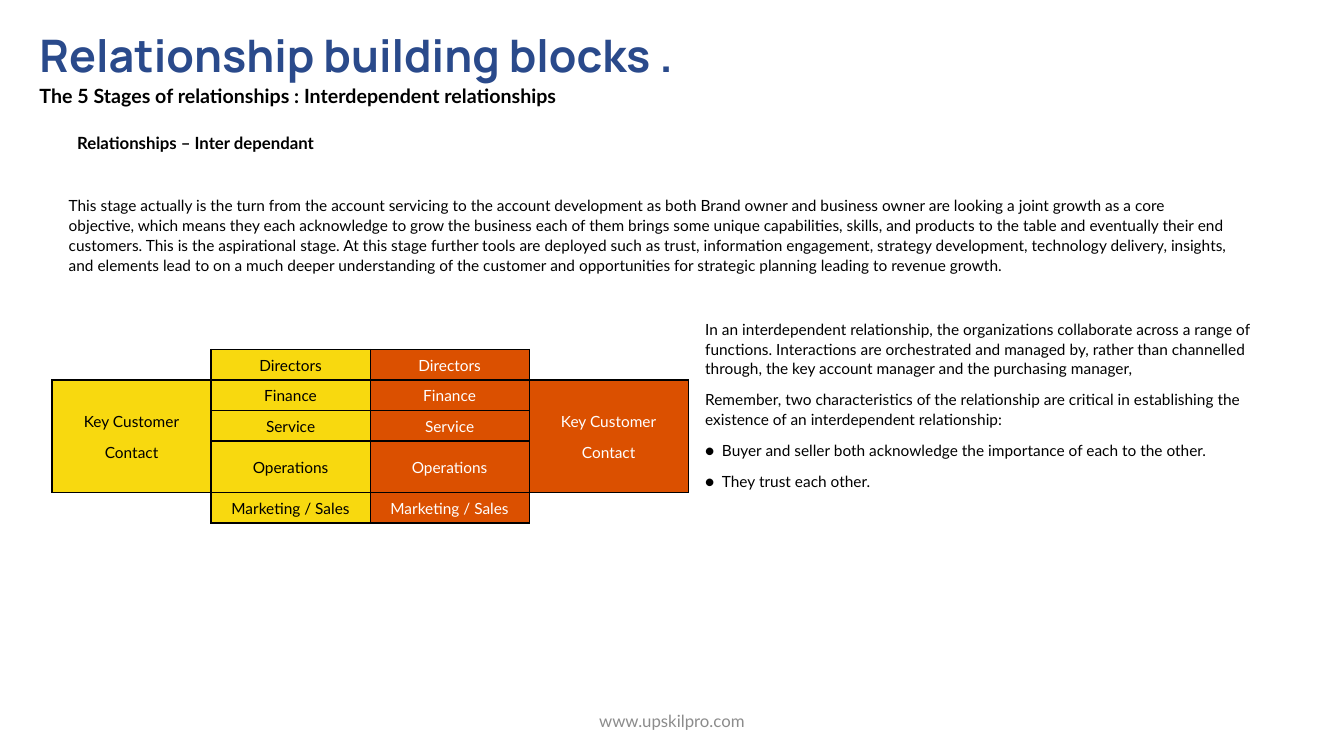
from dataclasses import dataclass

from lxml import etree
from pptx import Presentation
from pptx.dml.color import RGBColor
from pptx.enum.text import MSO_ANCHOR, MSO_AUTO_SIZE, PP_ALIGN
from pptx.oxml.ns import qn
from pptx.util import Pt

LEFT, CENTER = PP_ALIGN.LEFT, PP_ALIGN.CENTER
TOP, MIDDLE = MSO_ANCHOR.TOP, MSO_ANCHOR.MIDDLE
NO_AUTOSIZE = MSO_AUTO_SIZE.NONE
PLAIN_TABLE_STYLE = "{2D5ABB26-0587-4C30-8999-92F81FD0307C}"


@dataclass(frozen=True)
class Theme:
    heading_font: str = "Manrope"
    body_font: str = "Lato"
    blue: str = "2A4A8B"
    black: str = "000000"
    white: str = "FFFFFF"
    gray: str = "8C8C8C"
    yellow: str = "F8D90F"
    orange: str = "DB5000"
    title_size: int = 32
    subtitle_size: int = 14
    label_size: int = 12
    body_size: int = 11
    line_spacing: float = 1.07
    space_after: int = 8


THEME = Theme()

INTRODUCTION = (
    "This stage actually is the turn from the account servicing to the account development as both "
    "Brand owner and business owner are looking a joint growth as a core objective, which means they "
    "each acknowledge to grow the business each of them brings some unique capabilities, skills, and "
    "products to the table and eventually their end customers. This is the aspirational stage. At this "
    "stage further tools are deployed such as trust, information engagement, strategy development, "
    "technology delivery, insights, and elements lead to on a much deeper understanding of the customer "
    "and opportunities for strategic planning leading to revenue growth."
)
EXPLANATION = [
    "In an interdependent relationship, the organizations collaborate across a range of functions. "
    "Interactions are orchestrated and managed by, rather than channelled through, the key account "
    "manager and the purchasing manager,",
    "Remember, two characteristics of the relationship are critical in establishing the existence of "
    "an interdependent relationship:",
]
CHARACTERISTICS = [
    "Buyer and seller both acknowledge the importance of each to the other.",
    "They trust each other.",
]
FUNCTIONS = ["Directors", "Finance", "Service", "Operations", "Marketing / Sales"]
CONTACT = "Key Customer\nContact"


def format_paragraph(paragraph, size, color=THEME.black, bold=False, font=THEME.body_font,
                     alignment=LEFT, line_spacing=THEME.line_spacing, space_after=THEME.space_after):
    paragraph.alignment = alignment
    paragraph.line_spacing = line_spacing
    paragraph.space_before = Pt(0)
    paragraph.space_after = Pt(space_after)
    for run in paragraph.runs:
        run.font.name = font
        run.font.size = Pt(size)
        run.font.bold = bold
        run.font.color.rgb = RGBColor.from_string(color)


def place(shape, box):
    shape.left, shape.top, shape.width, shape.height = (Pt(value) for value in box)


def prepare_frame(shape, anchor=TOP):
    text_frame = shape.text_frame
    text_frame.word_wrap = True
    text_frame.auto_size = NO_AUTOSIZE
    text_frame.vertical_anchor = anchor
    return text_frame


def add_heading(slide, box, title, subtitle):
    shape = slide.shapes.title
    place(shape, box)
    text_frame = prepare_frame(shape)
    text_frame.text = f"{title}\n{subtitle}"
    title_paragraph, subtitle_paragraph = text_frame.paragraphs
    format_paragraph(title_paragraph, THEME.title_size, THEME.blue, True, THEME.heading_font,
                     line_spacing=1.0, space_after=0)
    format_paragraph(subtitle_paragraph, THEME.subtitle_size, bold=True)


def add_text(slide, box, text, size, anchor=TOP, **style):
    shape = slide.shapes.add_textbox(*(Pt(value) for value in box))
    text_frame = prepare_frame(shape, anchor)
    text_frame.text = text
    format_paragraph(text_frame.paragraphs[0], size, **style)


def set_bullet(paragraph, bullet, indent):
    properties = paragraph._p.get_or_add_pPr()
    properties.set("marL", str(Pt(indent)))
    properties.set("indent", str(-Pt(indent)))
    if bullet:
        etree.SubElement(properties, qn("a:buFont"), typeface=THEME.body_font)
        etree.SubElement(properties, qn("a:buChar"), char=bullet)
    else:
        etree.SubElement(properties, qn("a:buNone"))


def add_explanation(slide, box, statements, bullets):
    shape = slide.placeholders[1]
    place(shape, box)
    text_frame = prepare_frame(shape)
    text_frame.text = "\n".join(statements + bullets)
    for index, paragraph in enumerate(text_frame.paragraphs):
        bulleted = index >= len(statements)
        set_bullet(paragraph, "●" if bulleted else None, 12 if bulleted else 0)
        format_paragraph(paragraph, THEME.body_size)


def set_borders(cell, sides):
    properties = cell._tc.get_or_add_tcPr()
    for side in sides:
        line = etree.SubElement(properties, qn(f"a:ln{side}"), w=str(Pt(1)))
        fill = etree.SubElement(line, qn("a:solidFill"))
        etree.SubElement(fill, qn("a:srgbClr"), val=THEME.black)


def fill_cell(cell, text, background, color):
    cell.margin_left = cell.margin_right = Pt(5)
    cell.margin_top = cell.margin_bottom = Pt(0)
    cell.vertical_anchor = MIDDLE
    cell.text_frame.text = text
    for paragraph in cell.text_frame.paragraphs:
        format_paragraph(paragraph, THEME.body_size, color, alignment=CENTER)
        etree.SubElement(paragraph._p, qn("a:endParaRPr"), sz=str(THEME.body_size * 100))
    if background:
        cell.fill.solid()
        cell.fill.fore_color.rgb = RGBColor.from_string(background)
    else:
        cell.fill.background()


def add_contact_table(slide, box, functions, contact):
    row_total, column_total = len(functions), 4
    last_row, last_column = row_total - 1, column_total - 1
    frame = slide.shapes.add_table(row_total, column_total, *(Pt(value) for value in box))
    table = frame.table
    table.first_row = table.horz_banding = False
    frame._element.find(".//" + qn("a:tableStyleId")).text = PLAIN_TABLE_STYLE
    row_height = 21.8
    for index, row in enumerate(table.rows):
        tall = functions[index] == "Operations"
        row.height = Pt(box[3] - row_height * last_row if tall else row_height)
    for column in (0, last_column):
        table.cell(1, column).merge(table.cell(last_row - 1, column))
    for row in range(row_total):
        for column in range(column_total):
            cell = table.cell(row, column)
            outer_column = column in (0, last_column)
            empty = outer_column and row in (0, last_row)
            inner_sides = {"L": column > 0, "R": column < last_column,
                           "T": row > 0, "B": row < last_row}
            set_borders(cell, [side for side, inner in inner_sides.items()
                               if (inner or not empty) and not (cell.is_spanned and side == "T")])
            if empty or cell.is_spanned:
                text = ""
            else:
                text = contact if outer_column else functions[row]
            customer_side = column < column_total / 2
            background = THEME.yellow if customer_side else THEME.orange
            fill_cell(cell, text, None if empty else background,
                      THEME.black if customer_side else THEME.white)


def build_relationship_slide(presentation):
    slide = presentation.slides.add_slide(presentation.slide_layouts[1])
    add_heading(slide, (21, 16.5, 505, 63.5), "Relationship building blocks .",
                "The 5 Stages of relationships : Interdependent relationships")
    add_text(slide, (48, 90, 205, 22), "Relationships – Inter dependant", THEME.label_size, bold=True)
    add_text(slide, (42, 136, 847.5, 63.5), INTRODUCTION, THEME.body_size)
    add_contact_table(slide, (37.2, 249.6, 454.4, 124), FUNCTIONS, CONTACT)
    add_explanation(slide, (496.5, 224, 412, 130.5), EXPLANATION, CHARACTERISTICS)
    add_text(slide, (318, 500.5, 324, 29), "www.upskilpro.com", THEME.label_size, MIDDLE,
             color=THEME.gray, alignment=CENTER, line_spacing=1.0, space_after=0)


def main():
    presentation = Presentation()
    presentation.slide_width, presentation.slide_height = Pt(960), Pt(540)
    build_relationship_slide(presentation)
    presentation.save("out.pptx")


if __name__ == "__main__":
    main()
